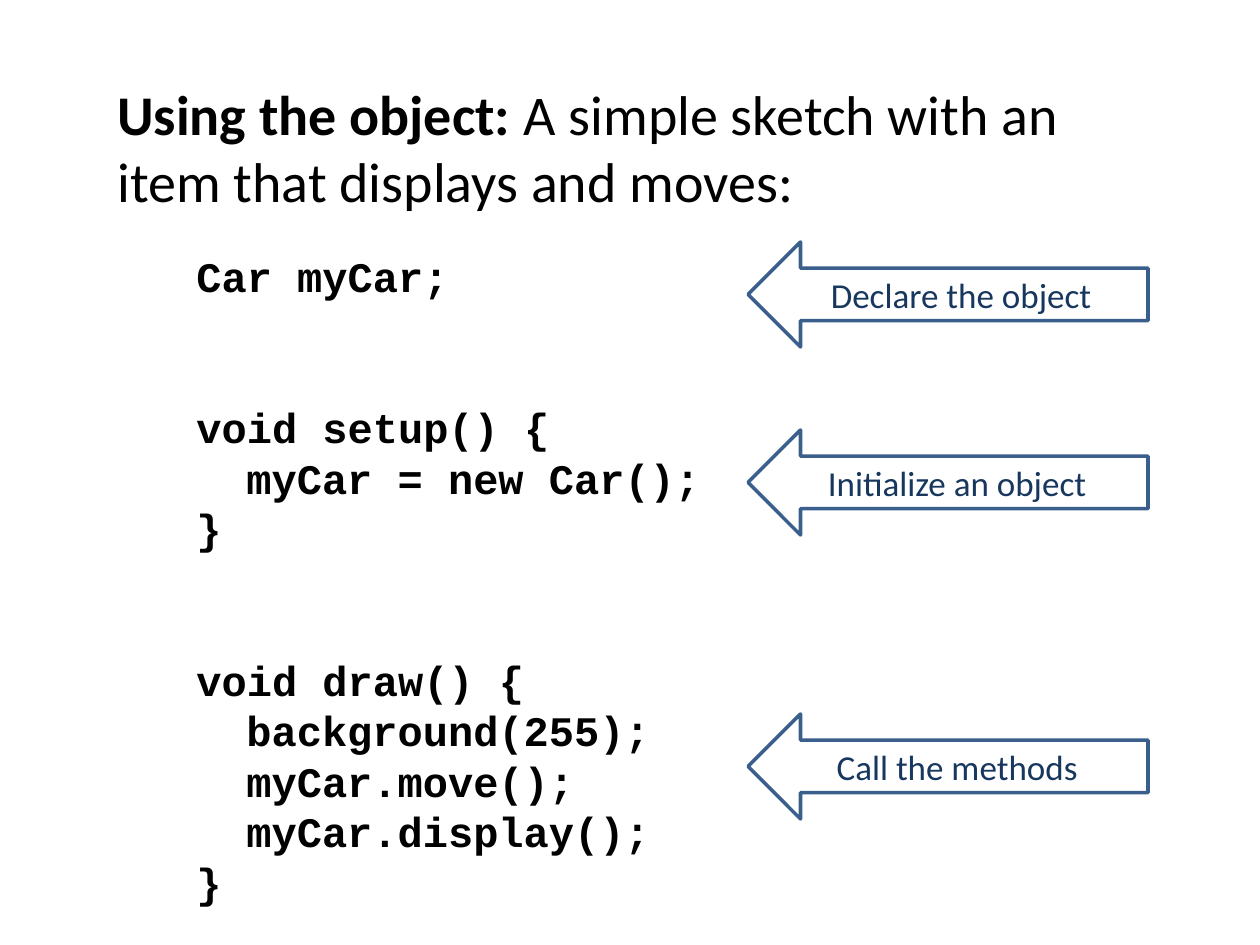
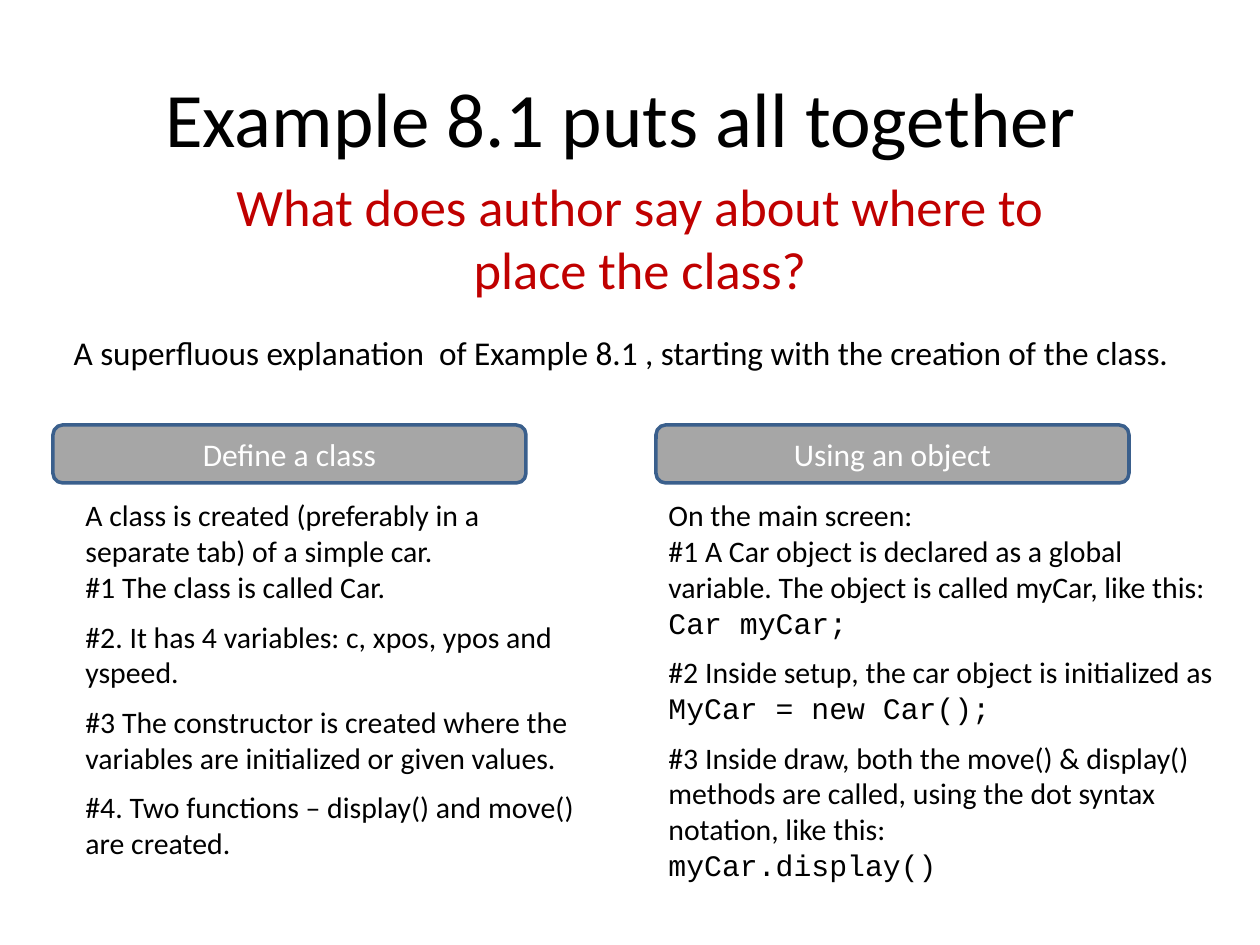
"""Build two slides on declaring, initializing and using a Car object."""
import pptx
import pptx.dml.color
import pptx.enum.shapes
import pptx.enum.text
import pptx.util

PX = 914400 / 126
COLORS = {"black": "000000", "navy": "17375E", "outline": "3A5F8C",
          "red": "C00000", "gray": "A6A6A6", "white": "FFFFFF"}
BODY, CODE = "Calibri", "Courier New"
SHAPES = pptx.enum.shapes.MSO_SHAPE
ALIGN = pptx.enum.text.PP_ALIGN
ANCHOR = pptx.enum.text.MSO_ANCHOR


def add_box(page, left, top, width, height, kind=None, fill=None):
    place = [round(length * PX) for length in (left, top, width, height)]
    if kind is None:
        box = page.shapes.add_textbox(*place)
    else:
        box = page.shapes.add_shape(kind, *place)
        box.shadow.inherit = False
        box.line.color.rgb = pptx.dml.color.RGBColor.from_string(COLORS["outline"])
        box.line.width = pptx.util.Pt(2)
        box.text_frame.vertical_anchor = ANCHOR.MIDDLE
        if fill:
            box.fill.solid()
            box.fill.fore_color.rgb = pptx.dml.color.RGBColor.from_string(COLORS[fill])
        else:
            box.fill.background()
    box.text_frame.word_wrap = True
    return box


def add_text(para, text, size, color="black", font=BODY, bold=False, align=ALIGN.LEFT):
    para.alignment = align
    span = para.add_run()
    span.text = text
    span.font.size = pptx.util.Pt(size)
    span.font.name = font
    span.font.bold = bold
    span.font.color.rgb = pptx.dml.color.RGBColor.from_string(COLORS[color])


deck = pptx.Presentation()
deck.slide_width, deck.slide_height = round(1260 * PX), round(945 * PX)
blank = deck.slide_layouts[6]

page = deck.slides.add_slide(blank)
line_height = 28.85
code_blocks = [
    [("Car myCar;", 0)],
    [("void setup() {", 0), ("myCar = new Car();", 1), ("}", 0)],
    [("void draw() {", 0), ("background(255);", 1), ("myCar.move();", 1),
     ("myCar.display();", 1), ("}", 0)],
]
frame = add_box(page, 112, 244, 659, 674).text_frame
para = frame.paragraphs[0]
for block_number, block in enumerate(code_blocks):
    for line_number, (code, level) in enumerate(block):
        if block_number or line_number:
            para = frame.add_paragraph()
        if block_number and line_number == 0:
            para.space_before = pptx.util.Pt(2 * line_height)
        para.line_spacing = pptx.util.Pt(line_height)
        properties = para._p.get_or_add_pPr()
        properties.set("marL", str(round((72 + 50 * level) * PX)))
        properties.set("indent", "0")
        add_text(para, code, 24, font=CODE, bold=True)

for top, label in [(242, "Declare the object"), (430, "Initialize an object "),
                   (714, "Call the methods ")]:
    arrow = add_box(page, 748, top, 400, 105, kind=SHAPES.LEFT_ARROW)
    add_text(arrow.text_frame.paragraphs[0], label, 20, color="navy", align=ALIGN.CENTER)

para = add_box(page, 105, 73, 1061, 149).text_frame.paragraphs[0]
add_text(para, "Using the object: ", 32, bold=True)
add_text(para, "A simple sketch with an item that displays and moves:", 32)

page = deck.slides.add_slide(blank)
headings = [
    ((63, 38, 1134, 158), "Example 8.1 puts all together ", 44, "black"),
    ((220, 168, 840, 140), "What does author say about where to place the class?", 30, "red"),
    ((53, 326, 1144, 53), "A superfluous explanation  of Example 8.1 , "
     "starting with the creation of the class. ", 19, "black"),
]
for place, text, size, color in headings:
    box = add_box(page, *place)
    box.text_frame.vertical_anchor = ANCHOR.MIDDLE if size == 44 else ANCHOR.TOP
    add_text(box.text_frame.paragraphs[0], text, size, color=color, align=ALIGN.CENTER)

columns = [
    ("Define a class", 53, (73, 491, 514, 379), [
        [("A class is created (preferably in a separate tab) of a simple car.", BODY)],
        [("#1 The class is called Car.", BODY)],
        [("#2. It has 4 variables: c, xpos, ypos and yspeed.", BODY)],
        [("#3 The constructor is created where the variables are initialized "
          "or given values.", BODY)],
        [("#4. Two functions – display() and move() are created.", BODY)],
    ]),
    ("Using an object", 656, (656, 491, 572, 402), [
        [("On the main screen:", BODY)],
        [("#1 A Car object is declared as a global variable. The object is called "
          "myCar, like this: ", BODY), ("Car myCar;", CODE)],
        [("#2 Inside setup, the car object is initialized as ", BODY),
         ("MyCar = new Car();", CODE)],
        [("#3 Inside draw, both the move() & display() methods are called, using "
          "the dot syntax notation, like this:", BODY), None, ("myCar.display()", CODE)],
    ]),
]
for heading, band_left, place, steps in columns:
    band = add_box(page, band_left, 425, 473, 58, kind=SHAPES.ROUNDED_RECTANGLE, fill="gray")
    add_text(band.text_frame.paragraphs[0], heading, 18, color="white", align=ALIGN.CENTER)
    frame = add_box(page, *place).text_frame
    for number, step in enumerate(steps):
        para = frame.add_paragraph() if number else frame.paragraphs[0]
        para.space_after = pptx.util.Pt(8 if number else 0)
        for part in step:
            if part is None:
                para.add_line_break()
            else:
                add_text(para, part[0], 17, font=part[1])

deck.save("out.pptx")
